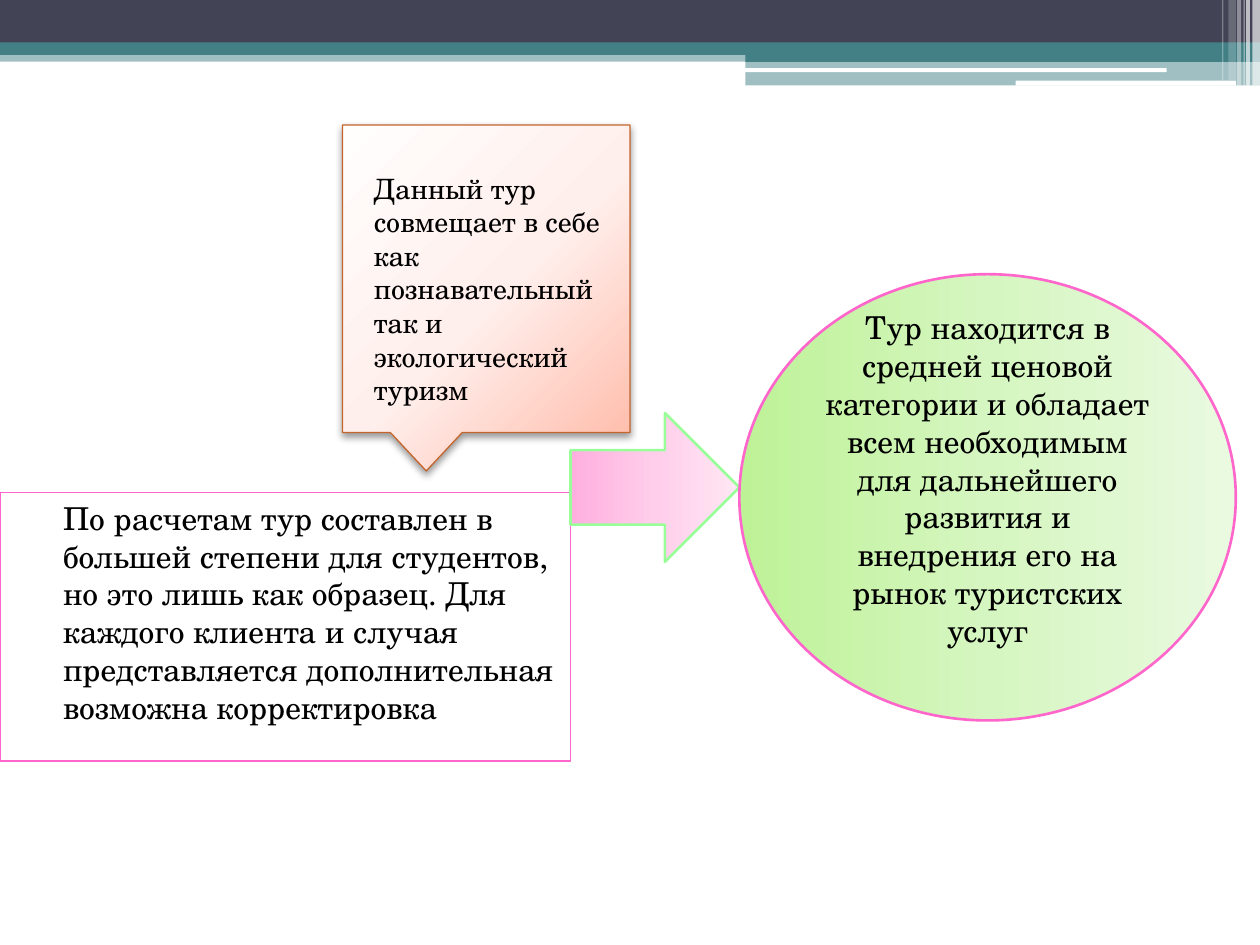
from dataclasses import dataclass

from lxml.etree import SubElement
from pptx import Presentation
from pptx.dml.color import RGBColor
from pptx.enum.shapes import MSO_SHAPE as Kind
from pptx.enum.text import MSO_ANCHOR as Anchor, PP_ALIGN as Align
from pptx.oxml.ns import qn
from pptx.util import Pt


@dataclass(frozen=True)
class Theme:
    font: str = "TeX Gyre Schola"
    body: int = 18
    small: int = 16
    ink: str = "000000"
    white: str = "FFFFFF"
    navy: str = "424456"
    teal: str = "438086"
    pink: str = "FF66CC"
    mint: str = "99FF99"
    rust: str = "C4652D"
    rose: tuple = ((0, "FFAFDF"), (50, "FFCEEA"), (100, "FFE7F4"))
    lime: tuple = ((0, "BEF297"), (50, "D5F6C0"), (100, "EAFAE0"))
    peach: tuple = ((0, "FFFEFD"), (55, "FFEFEC"), (100, "FFBFAE"))


def add(parent, tag, **attrs):
    return SubElement(parent, qn(tag), {k: str(v) for k, v in attrs.items()})


class Deck:
    def __init__(self, theme):
        self.theme = theme
        self.prs = Presentation()
        self.prs.slide_width, self.prs.slide_height = Pt(720), Pt(540)
        self.slide = self.prs.slides.add_slide(self.prs.slide_layouts[6])

    def shape(self, kind, box, fill=None, line=None, width=0.75):
        item = self.slide.shapes.add_shape(kind, *map(Pt, box))
        item.shadow.inherit = False
        if fill:
            item.fill.solid()
            item.fill.fore_color.rgb = RGBColor.from_string(fill)
        else:
            item.fill.background()
        if line:
            item.line.color.rgb = RGBColor.from_string(line)
            item.line.width = Pt(width)
        else:
            item.line.fill.background()
        return item

    def band(self, box, fill, alpha=100, kind=Kind.RECTANGLE):
        item = self.shape(kind, box, fill)
        if alpha < 100:
            color = item._element.spPr.find(".//" + qn("a:srgbClr"))
            add(color, "a:alpha", val=alpha * 1000)

    def blend(self, kind, box, stops, line, width, focus=None):
        """Add a gradient shape: left to right, or round a focus rectangle."""
        item = self.shape(kind, box, stops[0][1], line, width)
        solid = item._element.spPr.find(qn("a:solidFill"))
        grad = solid.makeelement(qn("a:gradFill"), {"rotWithShape": "1"})
        solid.getparent().replace(solid, grad)
        marks = add(grad, "a:gsLst")
        for pos, color in stops:
            add(add(marks, "a:gs", pos=pos * 1000), "a:srgbClr", val=color)
        if focus:
            ring = add(grad, "a:path", path="circle")
            sides = {side: part * 1000 for side, part in zip("ltrb", focus)}
            add(ring, "a:fillToRect", **sides)
        else:
            add(grad, "a:lin", ang=0, scaled=0)
        return item

    def shade(self, item, blur, dist, alpha):
        """Cast a black shadow straight down."""
        effects = item._element.spPr.find(qn("a:effectLst"))
        cast = add(effects, "a:outerShdw", blurRad=Pt(blur), dist=Pt(dist),
                   dir=90 * 60000, algn="ctr", rotWithShape=0)
        color = add(cast, "a:srgbClr", val=self.theme.ink)
        add(color, "a:alpha", val=alpha * 1000)

    def label(self, item, text, size, align=Align.LEFT, anchor=Anchor.TOP):
        frame = item.text_frame
        frame.word_wrap = True
        frame.vertical_anchor = anchor
        para = frame.paragraphs[0]
        para.text = text
        para.alignment = align
        para.font.name = self.theme.font
        para.font.size = Pt(size)
        para.font.color.rgb = RGBColor.from_string(self.theme.ink)
        return para

    def note(self, box, text, size):
        item = self.slide.shapes.add_textbox(*map(Pt, box))
        self.label(item, text, size)


def header(deck):
    look = deck.theme
    deck.band((0, 28.8, 720, 6.5), look.teal, 50)
    deck.band((0, 0, 720, 24.5), look.navy)
    deck.band((0, 24.2, 720, 7.2), look.teal)
    deck.band((426, 28.2, 294, 7.2), look.teal)
    deck.band((426, 34.6, 294, 14.2), look.teal, 50)
    for box in ((425.5, 39, 241.2, 2.2), (580.3, 46.1, 126, 2.9)):
        deck.band(box, look.white, kind=Kind.ROUNDED_RECTANGLE)
    stripes = ((715.7, 4.3, 49, 65), (712.1, 2.2, 49, 65),
               (710.6, 0.7, 49, 60), (707, 2.2, 49, 40),
               (702, 4.3, 46, 20), (698.4, 0.7, 46, 30))
    for left, width, height, alpha in stripes:
        deck.band((left, 0, width, height), look.white, alpha)


def content(deck):
    look = deck.theme
    panel = deck.shape(Kind.RECTANGLE, (0, 281.5, 326, 153.4), line=look.pink)
    para = deck.label(
        panel, "По расчетам тур составлен в большей степени для студентов, "
        "но это лишь как образец. Для каждого клиента и случая "
        "представляется дополнительная возможна корректировка", look.body)
    para.space_before = Pt(3)
    panel.text_frame.margin_left = Pt(36)

    deck.blend(Kind.RIGHT_ARROW, (326, 236, 96.5, 85), look.rose,
               look.mint, 1.5)

    oval = deck.blend(Kind.OVAL, (422.5, 156.7, 283.7, 255), look.lime,
                      look.pink, 1.5)
    deck.label(
        oval, "Тур находится в средней ценовой категории и обладает всем "
        "необходимым для дальнейшего развития и внедрения его на рынок "
        "туристских услуг", look.body, Align.CENTER, Anchor.MIDDLE)
    oval.text_frame.margin_bottom = Pt(25)

    callout = deck.blend(Kind.RECTANGULAR_CALLOUT, (195.7, 71.5, 164.3, 175.7),
                         look.peach, look.rust, 0.75, (-40, -90, 140, 190))
    deck.shade(callout, 4.1, 2, 40)
    deck.note((206.6, 94.3, 153.4, 143.3),
              "Данный тур совмещает в себе как познавательный так и "
              "экологический туризм", look.small)


def main():
    deck = Deck(Theme())
    header(deck)
    content(deck)
    deck.prs.save("out.pptx")


if __name__ == "__main__":
    main()
